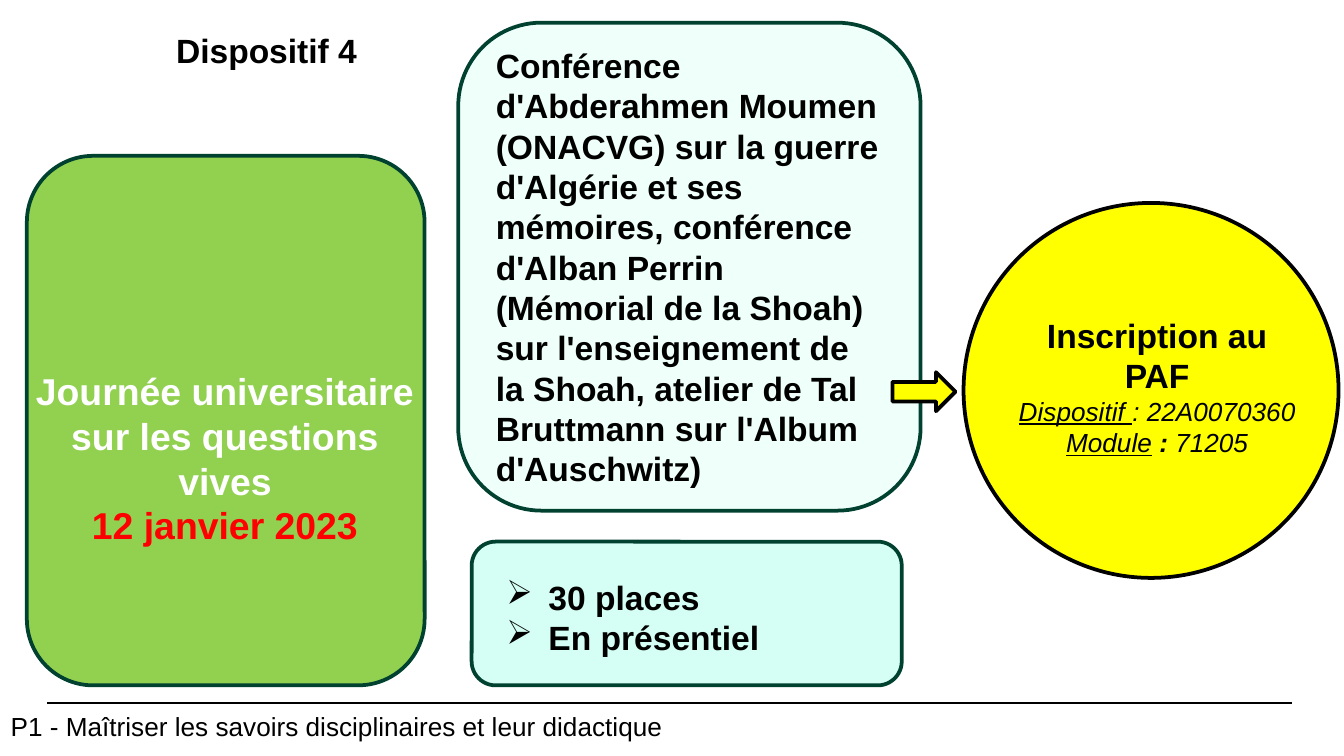
from dataclasses import dataclass

from lxml.etree import SubElement
from pptx import Presentation
from pptx.dml.color import RGBColor
from pptx.enum.shapes import MSO_CONNECTOR, MSO_SHAPE
from pptx.enum.text import MSO_ANCHOR, PP_ALIGN
from pptx.oxml.ns import qn
from pptx.util import Pt


@dataclass(frozen=True)
class Theme:
    font: str = "Arial"
    black: str = "000000"
    white: str = "FFFFFF"
    red: str = "FF0000"
    green: str = "92D050"
    dark_green: str = "004130"
    mint: str = "D5FFF4"
    yellow: str = "FFFF00"
    large: int = 20
    normal: int = 18
    small: int = 14
    outline: float = 2
    rule: float = 0.8


THEME = Theme()

# A paragraph is a list of runs; a run is (text, style).
BOLD = {"bold": True}
DETAIL = {"size": THEME.small, "italic": True}
LABEL = {**DETAIL, "underline": True}

TITLE = [[("Dispositif 4", BOLD)]]
EVENT = [
    [("Journée universitaire sur les questions vives",
      {"size": THEME.large, "bold": True, "color": THEME.white})],
    [("12 janvier 2023",
      {"size": THEME.large, "bold": True, "color": THEME.red})],
]
PROGRAMME = [[(
    "Conférence d'Abderahmen Moumen (ONACVG) sur la guerre d'Algérie et ses "
    "mémoires, conférence d'Alban Perrin (Mémorial de la Shoah) sur "
    "l'enseignement de la Shoah, atelier de Tal Bruttmann sur l'Album "
    "d'Auschwitz)", BOLD)]]
PLACES = [[("30 places", BOLD)], [("En présentiel", BOLD)]]
REGISTRATION = [
    [("Inscription au PAF", BOLD)],
    [("Dispositif ", LABEL), (": 22A0070360", DETAIL)],
    [("Module", LABEL), (" : ", {**DETAIL, "bold": True}), ("71205", DETAIL)],
]
FOOTER = [[("P1 - Maîtriser les savoirs disciplinaires et leur didactique",
            {"size": THEME.small})]]

# Shapes: preset, (left, top, width, height), fill, outline
PLACES_PANEL = (MSO_SHAPE.ROUNDED_RECTANGLE, (252.7, 290.2, 230.4, 77),
                THEME.mint, THEME.dark_green)
EVENT_PANEL = (MSO_SHAPE.ROUNDED_RECTANGLE, (14.4, 83.5, 213.1, 283.7),
               THEME.green, THEME.dark_green)
PROGRAMME_PANEL = (MSO_SHAPE.ROUNDED_RECTANGLE, (245.5, 12.2, 247.7, 261.4),
                   THEME.mint, THEME.dark_green)
REGISTRATION_CIRCLE = (MSO_SHAPE.OVAL, (516.2, 108.7, 200.9, 200.9),
                       THEME.yellow, THEME.black)
ARROW = (MSO_SHAPE.RIGHT_ARROW, (478.1, 199.4, 33.8, 20.9),
         THEME.yellow, THEME.black)

TITLE_BOX = (87.1, 12.2, 257.8, 28.8)
TEXT_BOXES = [  # box, paragraphs, alignment, bullet
    ((264.2, 305.3, 208.1, 51.1), PLACES, PP_ALIGN.LEFT, "➢"),
    ((10.1, 193.7, 221, 104.4), EVENT, PP_ALIGN.CENTER, None),
    ((-1.4, 377.3, 517.7, 24.5), FOOTER, PP_ALIGN.LEFT, None),
    ((537.8, 164.9, 164.2, 128.2), REGISTRATION, PP_ALIGN.CENTER, None),
]
RULE = (25.2, 376.6, 691.9, 376.6)
BULLET_INDENT = Pt(22.5)


def rgb(color):
    return RGBColor.from_string(color)


def points(values):
    return [Pt(value) for value in values]


def add_bullet(paragraph, character):
    properties = paragraph._p.get_or_add_pPr()
    properties.set("marL", str(BULLET_INDENT))
    properties.set("indent", str(-BULLET_INDENT))
    SubElement(properties, qn("a:buChar"), char=character)


def write(shape, paragraphs, align=PP_ALIGN.LEFT, bullet=None,
          anchor=MSO_ANCHOR.TOP):
    frame = shape.text_frame
    frame.word_wrap = True
    frame.vertical_anchor = anchor
    for index, runs in enumerate(paragraphs):
        paragraph = frame.add_paragraph() if index else frame.paragraphs[0]
        paragraph.alignment = align
        paragraph.line_spacing = 1
        paragraph.space_before = Pt(0)
        if bullet:
            add_bullet(paragraph, bullet)
        for text, style in runs:
            run = paragraph.add_run()
            run.text = text
            font = run.font
            font.name = THEME.font
            font.size = Pt(style.get("size", THEME.normal))
            font.color.rgb = rgb(style.get("color", THEME.black))
            font.bold = style.get("bold", False)
            font.italic = style.get("italic", False)
            font.underline = style.get("underline", False)


def add_panel(slide, preset, box, fill, outline):
    shape = slide.shapes.add_shape(preset, *points(box))
    shape.shadow.inherit = False
    shape.fill.solid()
    shape.fill.fore_color.rgb = rgb(fill)
    shape.line.color.rgb = rgb(outline)
    shape.line.width = Pt(THEME.outline)
    return shape


def set_opacity(shape, percent):
    color = shape._element.spPr.find(qn("a:solidFill"))[0]
    SubElement(color, qn("a:alpha"), val=str(percent * 1000))


def add_rule(slide):
    rule = slide.shapes.add_connector(MSO_CONNECTOR.STRAIGHT, *points(RULE))
    rule.line.color.rgb = rgb(THEME.black)
    rule.line.width = Pt(THEME.rule)
    SubElement(rule._element.spPr, qn("a:effectLst"))


def main():
    presentation = Presentation()
    presentation.slide_width, presentation.slide_height = Pt(720), Pt(405)
    slide = presentation.slides.add_slide(presentation.slide_layouts[5])

    title = slide.shapes.title
    title.left, title.top, title.width, title.height = points(TITLE_BOX)
    write(title, TITLE)

    add_rule(slide)
    add_panel(slide, *PLACES_PANEL)
    add_panel(slide, *EVENT_PANEL)
    programme = add_panel(slide, *PROGRAMME_PANEL)
    programme.adjustments[0] = 0.18
    set_opacity(programme, 37)
    write(programme, PROGRAMME, anchor=MSO_ANCHOR.MIDDLE)
    add_panel(slide, *REGISTRATION_CIRCLE)
    add_panel(slide, *ARROW)

    for box, paragraphs, align, bullet in TEXT_BOXES:
        text_box = slide.shapes.add_textbox(*points(box))
        write(text_box, paragraphs, align, bullet)

    presentation.save("out.pptx")


if __name__ == "__main__":
    main()
